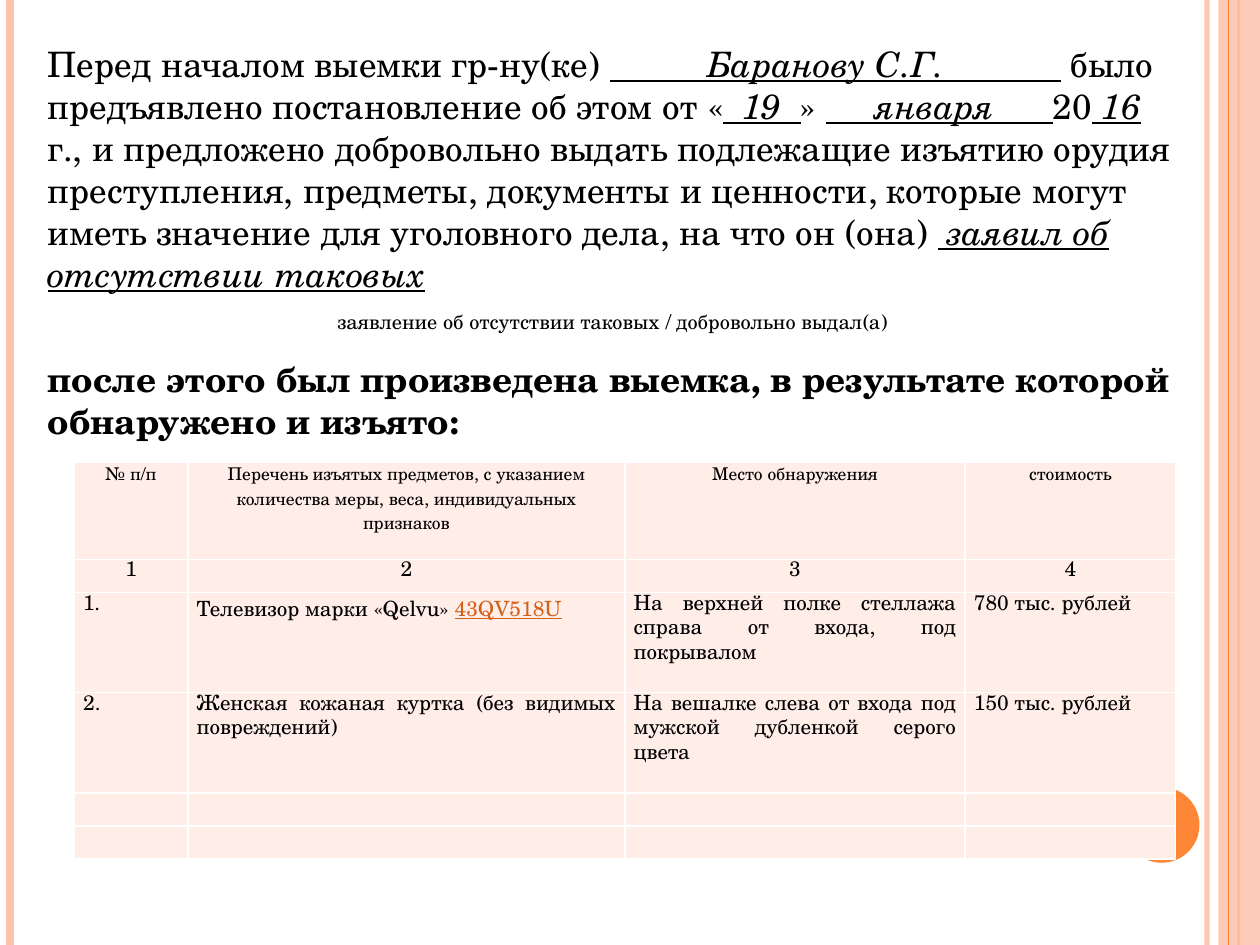
import lxml.etree
import pptx
import pptx.dml.color
import pptx.enum.shapes
import pptx.enum.text
import pptx.oxml
import pptx.oxml.ns
import pptx.util

COLORS = {"peach": "FEC3AE", "orange": "FE8637", "cell": "FFEDE8",
          "white": "FFFFFF", "text": "000000", "model": "D2611C"}
FONT = "TeX Gyre Schola"
qn = pptx.oxml.ns.qn
RGB = pptx.dml.color.RGBColor.from_string
ALIGN = pptx.enum.text.PP_ALIGN
SHAPE = pptx.enum.shapes.MSO_SHAPE

presentation = pptx.Presentation()
presentation.slide_width = pptx.util.Inches(10)
presentation.slide_height = pptx.util.Inches(7.5)
WIDTH, HEIGHT = presentation.slide_width, presentation.slide_height
slide = presentation.slides.add_slide(presentation.slide_layouts[6])


def set_opacity(element, percent):
    color = next(element.iter(qn("a:srgbClr")))
    lxml.etree.SubElement(color, qn("a:alpha")).set("val", str(percent * 1000))


def add_run(paragraph, text, size, color="text", italic=False, underline=False, bold=False):
    run = paragraph.add_run()
    run.text = text
    run.font.name = FONT
    run.font.size = pptx.util.Pt(size)
    run.font.color.rgb = RGB(COLORS[color])
    run.font.italic, run.font.underline, run.font.bold = italic, underline, bold
    return run


decorations = [
    ("stripe", (0.958, 3), "peach", 93),
    ("stripe", (0.008, 4.5), "peach", 100),
    ("stripe", (0.983, 1.5), "orange", 100),
    (SHAPE.RECTANGLE, (0.967, 0, 0.033, 1), "peach", 87),
    ("stripe", (0.975, 0.75), "orange", 100),
    (SHAPE.OVAL, (0.892, 0.833, 0.06, 0.08), "orange", 100),
]
for kind, geometry, color, opacity in decorations:
    if kind == "stripe":
        position, weight = geometry
        x = int(position * WIDTH)
        stripe = slide.shapes.add_connector(pptx.enum.shapes.MSO_CONNECTOR.STRAIGHT, x, 0, x, HEIGHT)
        stripe.line.color.rgb = RGB(COLORS[color])
        stripe.line.width = pptx.util.Pt(weight)
        lxml.etree.SubElement(stripe._element.spPr, qn("a:effectLst"))
        set_opacity(stripe._element.spPr, opacity)
    else:
        left, top, width, height = geometry
        shape = slide.shapes.add_shape(kind, int(left * WIDTH), int(top * HEIGHT),
                                       int(width * WIDTH), int(height * HEIGHT))
        shape.shadow.inherit = False
        shape.fill.solid()
        shape.fill.fore_color.rgb = RGB(COLORS[color])
        shape.line.fill.background()
        set_opacity(shape._element.spPr, opacity)

statement = [
    ("Перед началом выемки гр-ну(ке) ", False),
    ("          Баранову С.Г.            ", True),
    (" было предъявлено постановление об этом от «", False),
    ("  19  ", True),
    ("» ", False),
    ("     января      ", True),
    ("20", False),
    (" 16 ", True),
    ("г., и предложено добровольно выдать подлежащие изъятию орудия преступления, предметы, "
     "документы и ценности, которые могут иметь значение для уголовного дела, на что он (она) ", False),
    (" заявил об отсутствии таковых", True),
]
body = slide.shapes.add_textbox(int(0.028 * WIDTH), int(0.038 * HEIGHT),
                                int(0.921 * WIDTH), int(0.935 * HEIGHT))
body.text_frame.word_wrap = True
opening = body.text_frame.paragraphs[0]
caption = body.text_frame.add_paragraph()
result = body.text_frame.add_paragraph()
for paragraph in body.text_frame.paragraphs:
    paragraph.space_before = pptx.util.Pt(6)
for text, filled_in in statement:
    add_run(opening, text, 20, italic=filled_in, underline=filled_in)
caption.alignment = ALIGN.CENTER
caption_run = add_run(caption, "заявление об отсутствии таковых / добровольно выдал(а) ", 20)
caption_run.font._element.set("baseline", "30000")
add_run(result, "после этого был произведена выемка, в результате которой обнаружено и изъято:", 20, bold=True)

columns = [0.09, 0.347, 0.27, 0.167]
rows = [0.103, 0.035, 0.106, 0.106, 0.035, 0.035]
contents = [
    ["№ п/п", "Перечень изъятых предметов, с указанием количества меры, веса, индивидуальных признаков",
     "Место обнаружения", "стоимость"],
    ["1", "2", "3", "4"],
    ["1.", "Телевизор марки «Qelvu» ", "На верхней полке стеллажа справа от входа, под покрывалом",
     "780 тыс. рублей"],
    ["2.", "Женская кожаная куртка (без видимых повреждений)",
     "На вешалке слева от входа под мужской дубленкой серого цвета", "150 тыс. рублей"],
    [""] * 4,
    [""] * 4,
]
table = slide.shapes.add_table(len(rows), len(columns), int(0.059 * WIDTH), int(0.489 * HEIGHT),
                               int(sum(columns) * WIDTH), int(sum(rows) * HEIGHT)).table
table.first_row = table.horz_banding = False
for column, share in zip(table.columns, columns):
    column.width = int(share * WIDTH)
for row, share in zip(table.rows, rows):
    row.height = int(share * HEIGHT)

for row_index, texts in enumerate(contents):
    for column_index, text in enumerate(texts):
        cell = table.cell(row_index, column_index)
        cell.margin_left = cell.margin_right = pptx.util.Inches(0.07)
        cell.margin_top = cell.margin_bottom = 0
        cell.fill.solid()
        cell.fill.fore_color.rgb = RGB(COLORS["cell"])
        properties = cell._tc.get_or_add_tcPr()
        for index, side in enumerate(("lnL", "lnR", "lnT", "lnB")):
            border = lxml.etree.Element(qn("a:" + side), w=str(pptx.util.Pt(1)))
            fill = lxml.etree.SubElement(border, qn("a:solidFill"))
            lxml.etree.SubElement(fill, qn("a:srgbClr")).set("val", COLORS["white"])
            properties.insert(index, border)
        paragraph = cell.text_frame.paragraphs[0]
        if not text:
            lxml.etree.SubElement(paragraph._p, qn("a:endParaRPr")).set("sz", "1200")
            continue
        add_run(paragraph, text, 10 if row_index == 0 else 12)
        if (row_index, column_index) == (2, 1):
            add_run(paragraph, "43QV518U", 12, color="model", underline=True)
            continue
        paragraph.line_spacing = pptx.util.Pt(14)
        paragraph.alignment = ALIGN.CENTER if row_index < 2 else ALIGN.JUSTIFY
        if row_index >= 2:
            paragraph.space_before = pptx.util.Pt(6)

presentation.save("out.pptx")
